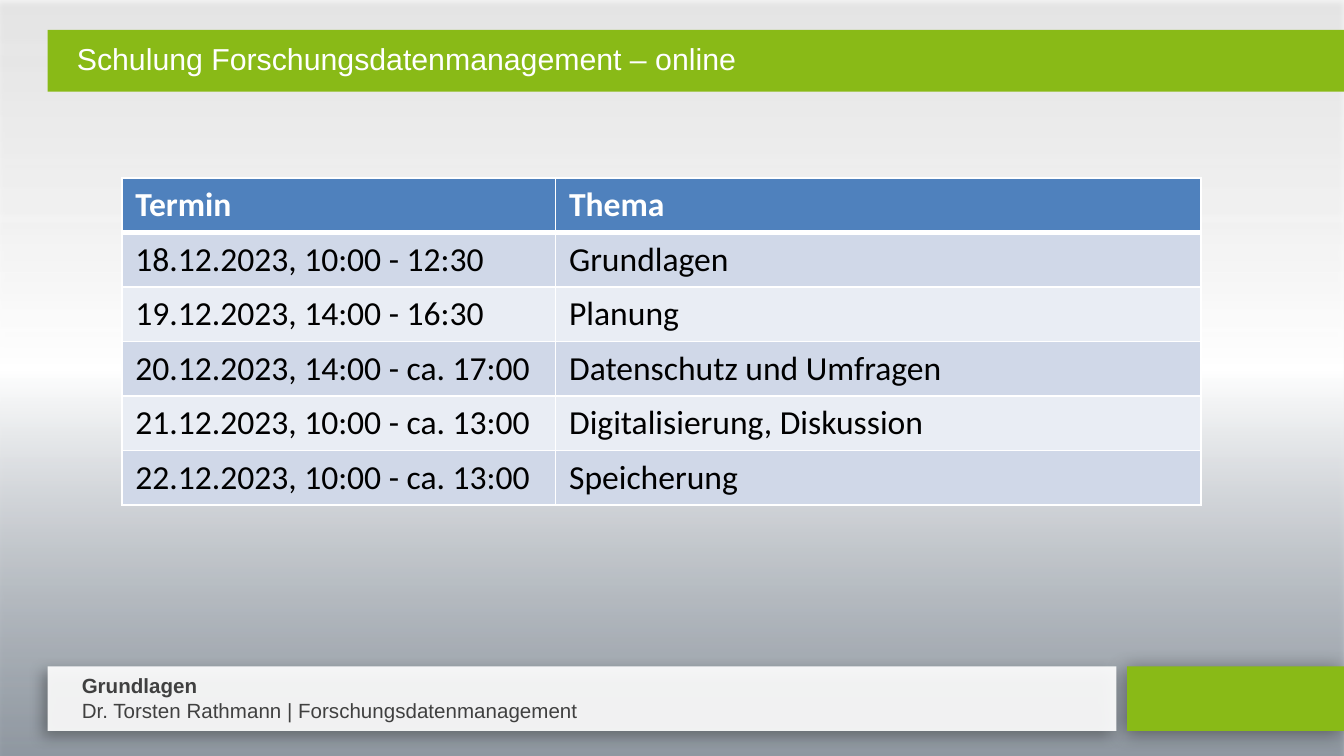
from lxml import etree
from pptx import Presentation
from pptx import util as u
from pptx.dml.color import RGBColor
from pptx.enum import shapes, text
from pptx.oxml import parse_xml
from pptx.oxml.ns import nsdecls, qn

COLOURS = {
    "green": "89BA17", "white": "FFFFFF", "black": "000000", "footer": "404040",
    "header": "4F81BD", "band_dark": "D0D8E8", "band_light": "E9EDF4",
    "slate": "818C98", "pale": "F2F2F2",
}
SCHEDULE = [
    ("Termin", "Thema"),
    ("18.12.2023, 10:00 - 12:30", "Grundlagen"),
    ("19.12.2023, 14:00 - 16:30", "Planung"),
    ("20.12.2023, 14:00 - ca. 17:00", "Datenschutz und Umfragen"),
    ("21.12.2023, 10:00 - ca. 13:00", "Digitalisierung, Diskussion"),
    ("22.12.2023, 10:00 - ca. 13:00", "Speicherung"),
]


def colour_xml(colour, alpha=100):
    return (f'<a:srgbClr {nsdecls("a")} val="{COLOURS[colour]}">'
            f'<a:alpha val="{alpha * 1000}"/></a:srgbClr>')


def write(paragraph, words, size=18, font="Arial", colour="black", bold=False, indent=0):
    """Put formatted text into a paragraph."""
    if indent:
        properties = paragraph._p.get_or_add_pPr()
        properties.set("marL", str(u.Pt(indent)))
        properties.set("indent", "0")
    run = paragraph.add_run()
    run.text = words
    run.font.size = u.Pt(size)
    run.font.name = font
    run.font.bold = bold
    run.font.color.rgb = RGBColor.from_string(COLOURS[colour])


class SlideBuilder:
    """Holds the current slide and draws its elements; lengths are in points."""

    def __init__(self, slide):
        self.slide = slide

    def rectangle(self, left, top, width, height, colour=None, alpha=100,
                  gradient=None, shadow=None):
        shape = self.slide.shapes.add_shape(
            shapes.MSO_SHAPE.RECTANGLE, u.Pt(left), u.Pt(top), u.Pt(width), u.Pt(height))
        shape.line.fill.background()
        shape.shadow.inherit = False
        properties = shape._element.spPr
        if gradient:
            shape.fill.background()
            stops = "".join(f'<a:gs pos="{position * 1000}">{colour_xml(name, opacity)}</a:gs>'
                            for position, name, opacity in gradient)
            fill = parse_xml(f'<a:gradFill {nsdecls("a")} rotWithShape="1"><a:gsLst>{stops}'
                             '</a:gsLst><a:lin ang="16200000" scaled="0"/></a:gradFill>')
            properties.replace(properties.find(qn("a:noFill")), fill)
        else:
            shape.fill.solid()
            shape.fill.fore_color.rgb = RGBColor.from_string(COLOURS[colour])
            if alpha < 100:
                tint = properties.find(qn("a:solidFill"))[0]
                etree.SubElement(tint, qn("a:alpha")).set("val", str(alpha * 1000))
        if shadow:
            opacity, blur, distance, angle = shadow
            properties.find(qn("a:effectLst")).append(parse_xml(
                f'<a:outerShdw {nsdecls("a")} blurRad="{u.Pt(blur)}" dist="{u.Pt(distance)}" '
                f'dir="{angle * 60000}" algn="tl" rotWithShape="0">'
                f'{colour_xml("black", opacity)}</a:outerShdw>'))

    def textbox(self, left, top, width, height, lines, inset_top=3.6, **style):
        box = self.slide.shapes.add_textbox(u.Pt(left), u.Pt(top), u.Pt(width), u.Pt(height))
        frame = box.text_frame
        frame.word_wrap = True
        frame.vertical_anchor = text.MSO_ANCHOR.TOP
        frame.margin_top = u.Pt(inset_top)
        for index, (words, bold) in enumerate(lines):
            paragraph = frame.add_paragraph() if index else frame.paragraphs[0]
            write(paragraph, words, bold=bold, **style)

    def cell_borders(self, cell, **widths):
        properties = cell._tc.get_or_add_tcPr()
        for side in "LRTB":
            properties.append(parse_xml(
                f'<a:ln{side} {nsdecls("a")} w="{u.Pt(widths.get(side, 1))}"><a:solidFill>'
                f'{colour_xml("white")}</a:solidFill></a:ln{side}>'))

    def table(self, left, top, column_widths, row_height, rows):
        table = self.slide.shapes.add_table(
            len(rows), len(column_widths), u.Pt(left), u.Pt(top),
            u.Pt(sum(column_widths)), u.Pt(row_height * len(rows))).table
        table.first_row = table.horz_banding = False
        for column, width in zip(table.columns, column_widths):
            column.width = u.Pt(width)
        for r, row in enumerate(rows):
            table.rows[r].height = u.Pt(row_height)
            header = r == 0
            fill = "header" if header else ("band_dark" if r % 2 else "band_light")
            for c, words in enumerate(row):
                cell = table.cell(r, c)
                self.cell_borders(cell, B=3 if header else 1, T=3 if r == 1 else 1)
                cell.fill.solid()
                cell.fill.fore_color.rgb = RGBColor.from_string(COLOURS[fill])
                write(cell.text_frame.paragraphs[0], words, font="Calibri",
                      colour="white" if header else "black", bold=header)


def main():
    presentation = Presentation()
    presentation.slide_width, presentation.slide_height = u.Pt(720), u.Pt(405)
    builder = SlideBuilder(presentation.slides.add_slide(presentation.slide_layouts[6]))

    # Background
    builder.rectangle(-0.5, 0, 720.5, 405, shadow=(35, 3.1, 1.8, 90),
                      gradient=[(0, "slate", 75), (51, "white", 100), (100, "pale", 73)])

    # Footer
    builder.rectangle(603.8, 357, 116.2, 34.6, "green", shadow=(42, 10.8, 2, 142))
    builder.rectangle(25.5, 357, 572.5, 34.6, "white", alpha=91, shadow=(34, 7.5, 4, 145))
    builder.textbox(36.7, 357, 430.5, 34, size=11, colour="footer", lines=[
        ("Grundlagen", True),
        ("Dr. Torsten Rathmann | Forschungsdatenmanagement", False)])

    # Title bar
    builder.rectangle(25.5, 16, 697.5, 33.2, "green")
    builder.textbox(25.5, 16, 686, 25, [("Schulung Forschungsdatenmanagement – online", False)],
                    inset_top=5.8, size=16.2, colour="white", indent=8.6)

    # Schedule
    builder.table(65.3, 95.3, (232.4, 345.6), 29.2, SCHEDULE)

    presentation.save("out.pptx")


if __name__ == "__main__":
    main()
